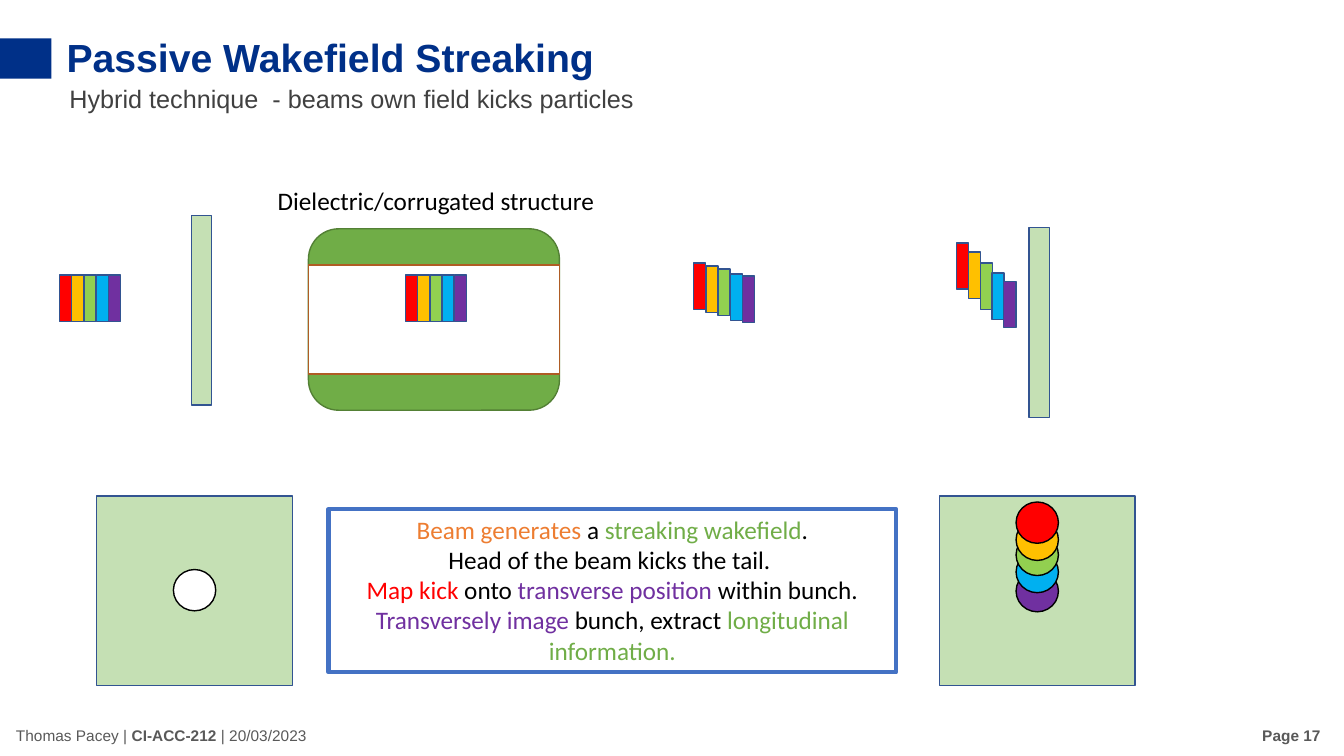
from dataclasses import dataclass

from pptx import Presentation
from pptx.dml.color import RGBColor
from pptx.enum.shapes import MSO_SHAPE as Shape
from pptx.enum.text import MSO_ANCHOR as Anchor, PP_ALIGN as Align
from pptx.util import Inches, Pt


@dataclass(frozen=True)
class Theme:
    # Colours
    navy: str = "003088"
    subtitle: str = "404040"
    footer: str = "595959"
    black: str = "000000"
    white: str = "FFFFFF"
    screen: str = "C5E0B4"
    outline: str = "325491"
    green: str = "70AD47"
    green_edge: str = "538035"
    gap_edge: str = "AF5C24"
    frame: str = "4472C4"
    orange: str = "ED7D31"
    red: str = "FF0000"
    purple: str = "7030A0"
    slices: tuple = ("FF0000", "FFC000", "92D050", "00B0F0", "7030A0")
    # Type
    heading_font: str = "Arial"
    body_font: str = "Calibri"
    title_size: int = 28
    body_size: int = 18
    footer_size: int = 11


class SlideBuilder:
    """Places elements on a grid whose columns and rows are 0.1 inch."""

    CELL = 0.1
    COLUMNS, ROWS = 133.33, 75

    def __init__(self, theme):
        self.theme = theme
        self.deck = Presentation()
        self.deck.slide_width = self.cells(self.COLUMNS)
        self.deck.slide_height = self.cells(self.ROWS)
        self.slide = self.deck.slides.add_slide(self.deck.slide_layouts[5])
        self.shapes = self.slide.shapes

    def cells(self, count):
        return Inches(count * self.CELL)

    def box(self, *place):
        return [self.cells(count) for count in place]

    def group(self):
        return self.slide.shapes.add_group_shape().shapes

    def shape(self, kind, place, fill, line=None, width=1, parent=None):
        item = (parent or self.shapes).add_shape(kind, *self.box(*place))
        item.shadow.inherit = False
        if fill:
            item.fill.solid()
            item.fill.fore_color.rgb = RGBColor.from_string(fill)
        else:
            item.fill.background()
        if line:
            item.line.color.rgb = RGBColor.from_string(line)
            item.line.width = Pt(width)
        else:
            item.line.fill.background()
        return item

    def fill_text(self, frame, paragraphs, size, font, align=Align.LEFT, anchor=Anchor.TOP):
        """Each paragraph is a list of (text, colour, bold) runs."""
        frame.word_wrap = True
        frame.vertical_anchor = anchor
        for index, runs in enumerate(paragraphs):
            paragraph = frame.add_paragraph() if index else frame.paragraphs[0]
            paragraph.alignment = align
            for text, colour, bold in runs:
                run = paragraph.add_run()
                run.text = text
                run.font.size, run.font.name, run.font.bold = Pt(size), font, bold
                run.font.color.rgb = RGBColor.from_string(colour)

    def text(self, place, runs, size, font, **layout):
        frame = self.shapes.add_textbox(*self.box(*place)).text_frame
        self.fill_text(frame, [runs], size, font, **layout)

    def title(self, place, text):
        heading = self.shapes.title
        heading.left, heading.top, heading.width, heading.height = self.box(*place)
        self.fill_text(heading.text_frame, [[(text, self.theme.navy, True)]],
                       self.theme.title_size, self.theme.heading_font)
        heading.text_frame.word_wrap = False

    def bunch(self, left, top, kicks=(0,) * 5, pitch=1.22, parent=None):
        """Five beam slices, head to tail, each lowered by its kick."""
        parent = parent or self.group()
        for index, (colour, kick) in enumerate(zip(self.theme.slices, kicks)):
            self.shape(Shape.RECTANGLE, (left + index * pitch, top + kick, 1.2, 4.6),
                       colour, self.theme.outline, parent=parent)

    def screen_edge(self, left, top):
        self.shape(Shape.RECTANGLE, (left, top, 2, 18.8),
                   self.theme.screen, self.theme.outline)

    def screen_face(self, left, spot_left, spots):
        """A screen seen from the front with its (top, colour) beam spots."""
        parent = self.group()
        self.shape(Shape.RECTANGLE, (left, 49.2, 19.4, 18.8),
                   self.theme.screen, self.theme.outline, parent=parent)
        for top, colour in spots:
            self.shape(Shape.OVAL, (spot_left, top, 4.2, 4.1),
                       colour, self.theme.black, parent=parent)


def main():
    theme = Theme()
    page = SlideBuilder(theme)

    # Heading
    page.title((5.6, 2.8, 55, 5.7), "Passive Wakefield Streaking")
    page.shape(Shape.RECTANGLE, (0, 3.8, 5.1, 4), theme.navy)
    page.text((5.9, 7.8, 61.1, 4),
              [("Hybrid technique  - beams own field kicks particles", theme.subtitle, False)],
              theme.body_size, theme.heading_font)

    # Footer
    page.text((0.6, 71, 40.5, 4),
              [("Thomas Pacey | ", theme.footer, False),
               ("CI-ACC-212 ", theme.footer, True),
               ("| 20/03/2023", theme.footer, False)],
              theme.footer_size, theme.heading_font, anchor=Anchor.MIDDLE)
    page.text((102, 71, 30, 4), [("Page 17", theme.footer, True)],
              theme.footer_size, theme.heading_font, align=Align.RIGHT, anchor=Anchor.MIDDLE)

    # Beam before, inside and after the structure
    page.bunch(5.9, 27.3)
    structure = page.group()
    page.shape(Shape.ROUNDED_RECTANGLE, (30.6, 22.7, 24.9, 18),
               theme.green, theme.green_edge, parent=structure)
    page.shape(Shape.RECTANGLE, (30.6, 26.3, 24.9, 10.8),
               theme.white, theme.gap_edge, parent=structure)
    page.bunch(40.2, 27.3, parent=structure)
    page.text((23.3, 17.9, 39.9, 4),
              [("Dielectric/corrugated structure", theme.black, False)],
              theme.body_size, theme.body_font, align=Align.CENTER)
    page.bunch(68.8, 26.1, kicks=(0, 0.3, 0.6, 1.1, 1.3))
    page.bunch(94.9, 24.1, kicks=(0, 0.9, 2, 3, 3.8), pitch=1.17)

    # Screens from the side and from the front
    page.screen_edge(19, 21.4)
    page.screen_edge(102.1, 22.6)
    page.screen_face(9.6, 17.2, [(56.5, theme.white)])
    streak_tops = (49.8, 51.5, 53, 54.7, 56.6)
    page.screen_face(93.2, 100.8, reversed(list(zip(streak_tops, theme.slices))))

    # Explanation
    explanation = page.shape(Shape.RECTANGLE, (32.6, 50.5, 56.3, 16.2),
                             None, theme.frame, width=3)
    page.fill_text(explanation.text_frame, [
        [("Beam generates", theme.orange, False), (" a ", theme.black, False),
         ("streaking wakefield", theme.green, False), (".", theme.black, False)],
        [("Head of the beam kicks the tail. ", theme.black, False)],
        [("Map kick ", theme.red, False), ("onto ", theme.black, False),
         ("transverse position ", theme.purple, False),
         ("within bunch.", theme.black, False)],
        [("Transversely image ", theme.purple, False),
         ("bunch, extract ", theme.black, False),
         ("longitudinal information.", theme.green, False)],
    ], theme.body_size, theme.body_font, align=Align.CENTER)

    page.deck.save("out.pptx")


if __name__ == "__main__":
    main()
